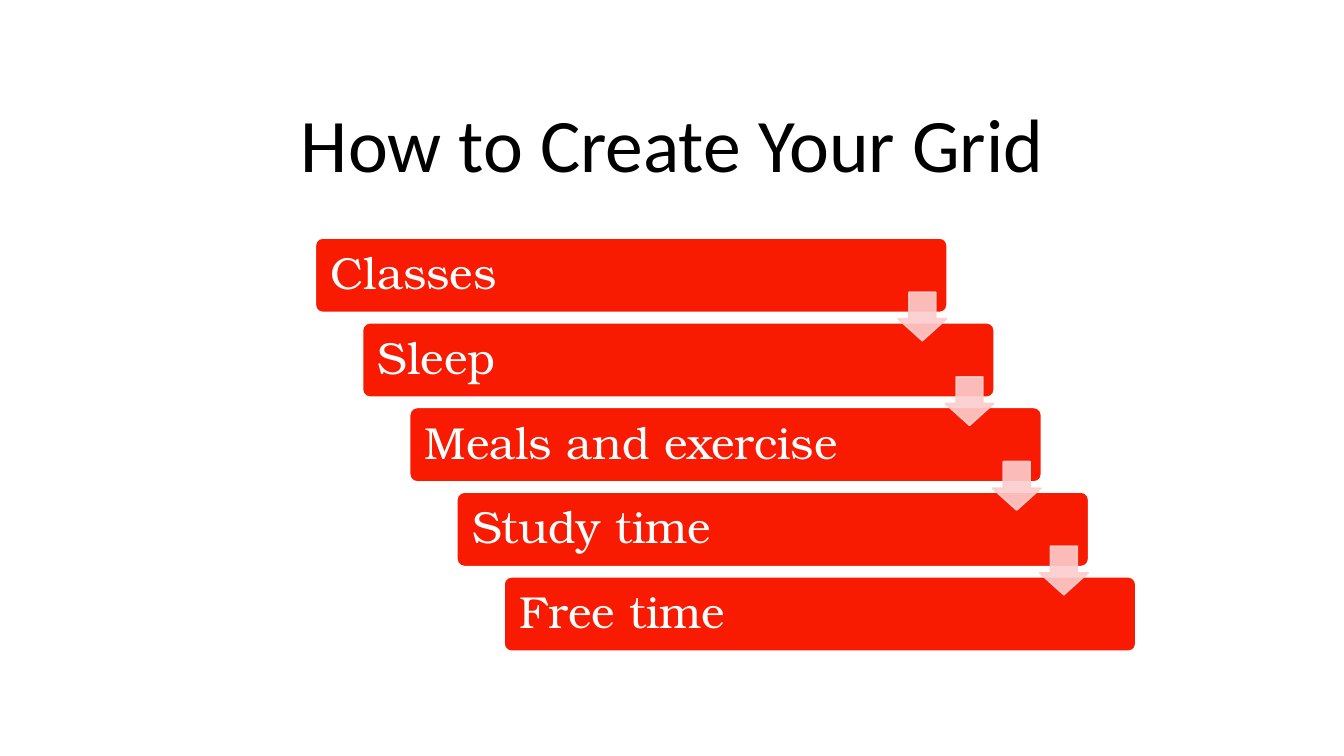
from pptx import Presentation
from pptx.dml.color import RGBColor
from pptx.enum.shapes import MSO_SHAPE
from pptx.enum.text import MSO_ANCHOR, PP_ALIGN
from pptx.oxml.ns import qn
from pptx.util import Pt
from lxml import etree

BAR_KIND = MSO_SHAPE.ROUNDED_RECTANGLE
ARROW_KIND = MSO_SHAPE.DOWN_ARROW
TOP, MIDDLE = MSO_ANCHOR.TOP, MSO_ANCHOR.MIDDLE
LEFT, CENTER = PP_ALIGN.LEFT, PP_ALIGN.CENTER

# Content
TITLE = "How to Create Your Grid"
STEPS = ["Classes", "Sleep", "Meals and exercise", "Study time", "Free time"]

# Look and layout, in points
RED, PINK, WHITE, BLACK = "F81B02", "FCCDCC", "FFFFFF", "000000"
TITLE_BOX = (64.8, 65.5, 830.9, 138.2)
BAR_LEFT, BAR_TOP, BAR_WIDTH, BAR_HEIGHT = 225.2, 170, 451.4, 53.3
STEP_RIGHT, STEP_DOWN = 33.7, 60.5
ARROW_RIGHT, ARROW_DOWN, ARROW_SIZE = 416.3, 38.7, 34.6


def color(value):
    return RGBColor.from_string(value)


def add_text(frame, text, font, size, hue, align, anchor):
    frame.word_wrap = True
    frame.vertical_anchor = anchor
    para = frame.paragraphs[0]
    para.alignment = align
    span = para.add_run()
    span.text = text
    span.font.name = font
    span.font.size = Pt(size)
    span.font.color.rgb = color(hue)
    return para


def add_shape(page, kind, box, adjustments, fill, line):
    shape = page.shapes.add_shape(kind, *map(Pt, box))
    shape.shadow.inherit = False
    for index, value in enumerate(adjustments):
        shape.adjustments[index] = value
    shape.fill.solid()
    shape.fill.fore_color.rgb = color(fill)
    shape.line.color.rgb = color(line)
    shape.line.width = Pt(1.25)
    return shape


def set_opacity(shape, percent):
    for tint in shape.element.spPr.iter(qn("a:srgbClr")):
        etree.SubElement(tint, qn("a:alpha")).set("val", str(percent * 1000))


deck = Presentation()
deck.slide_width, deck.slide_height = Pt(960), Pt(540)
page = deck.slides.add_slide(deck.slide_layouts[5])

# Title
title = page.shapes.title
title.left, title.top, title.width, title.height = map(Pt, TITLE_BOX)
add_text(title.text_frame, TITLE, "Calibri", 54, BLACK, CENTER, TOP)

# Staircase of bars
for index, step in enumerate(STEPS):
    box = (BAR_LEFT + index * STEP_RIGHT, BAR_TOP + index * STEP_DOWN,
           BAR_WIDTH, BAR_HEIGHT)
    bar = add_shape(page, BAR_KIND, box, [0.1], RED, WHITE)
    frame = bar.text_frame
    frame.margin_left = frame.margin_right = Pt(9.4)
    para = add_text(frame, step, "TeX Gyre Bonum", 32, WHITE, LEFT, MIDDLE)
    para.line_spacing = 0.9

# Arrows from each bar to the next
for index in range(len(STEPS) - 1):
    box = (BAR_LEFT + ARROW_RIGHT + index * STEP_RIGHT,
           BAR_TOP + ARROW_DOWN + index * STEP_DOWN, ARROW_SIZE, ARROW_SIZE)
    arrow = add_shape(page, ARROW_KIND, box, [0.55, 0.45], PINK, PINK)
    set_opacity(arrow, 90)

deck.save("out.pptx")
